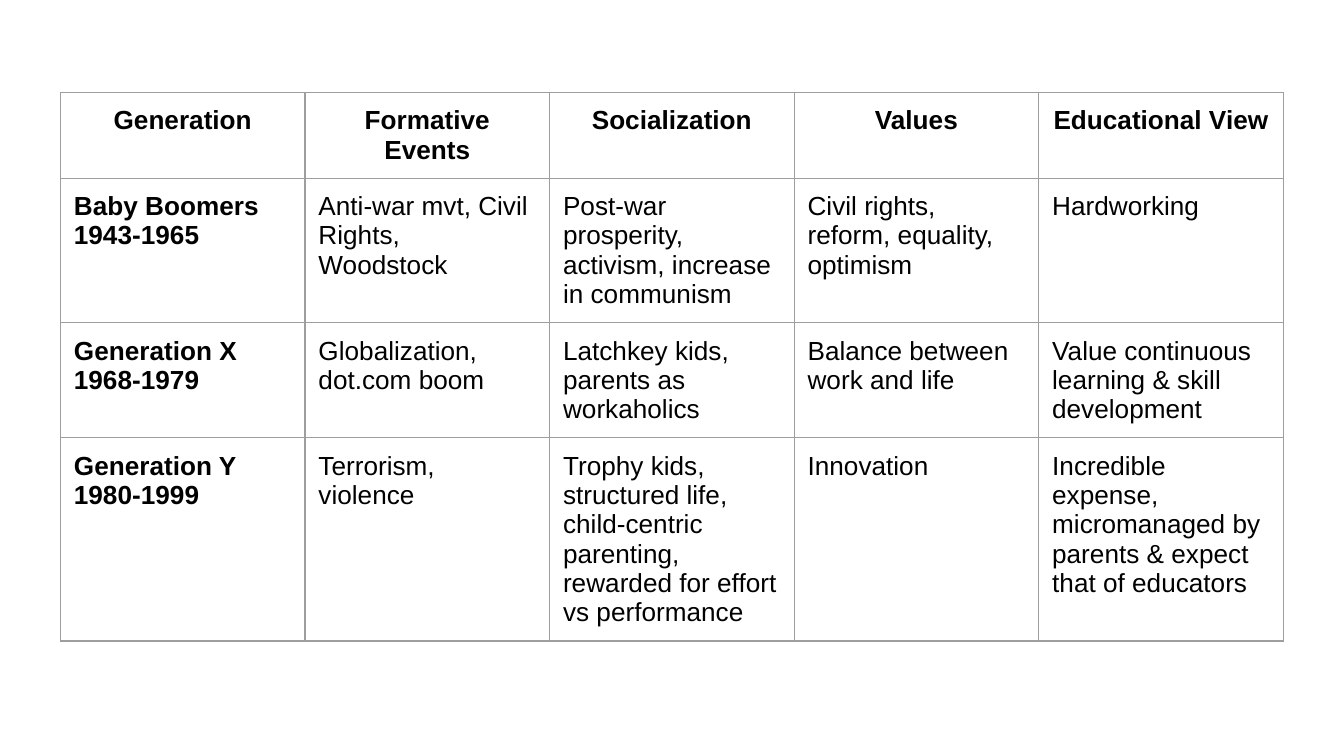
"""Build a slide with a table that compares three generations."""
import pptx
import pptx.dml.color
import pptx.enum.text
import pptx.oxml
import pptx.oxml.ns
import pptx.util

Inches = pptx.util.Inches
Pt = pptx.util.Pt
BLACK = pptx.dml.color.RGBColor(0x00, 0x00, 0x00)
GREY = pptx.dml.color.RGBColor(0x9E, 0x9E, 0x9E)

HEADS = ["Generation", "Formative Events", "Socialization", "Values", "Educational View"]
ROWS = [
    ["Baby Boomers\n1943-1965", "Anti-war mvt, Civil Rights, Woodstock",
     "Post-war prosperity, activism, increase in communism",
     "Civil rights, reform, equality, optimism", "Hardworking"],
    ["Generation X\n1968-1979", "Globalization, dot.com boom",
     "Latchkey kids, parents as workaholics", "Balance between work and life",
     "Value continuous learning & skill development"],
    ["Generation Y\n1980-1999", "Terrorism, violence",
     "Trophy kids, structured life, child-centric parenting, "
     "rewarded for effort vs performance", "Innovation",
     "Incredible expense, micromanaged by parents & expect that of educators"],
]


class Deck:
    def __init__(self, wide, high):
        self.prs = pptx.Presentation()
        self.prs.slide_width = Inches(wide)
        self.prs.slide_height = Inches(high)
        self.font, self.size, self.ink = "Arial", Pt(14), BLACK
        self.edge, self.line, self.pad = GREY, Pt(0.75), Inches(0.1)
        self.slide = self.prs.slides.add_slide(self.prs.slide_layouts[6])

    def border(self, cell):
        props = cell._tc.get_or_add_tcPr()
        for side in "LRTB":
            props.append(pptx.oxml.parse_xml(
                f'<a:ln{side} {pptx.oxml.ns.nsdecls("a")} w="{int(self.line)}">'
                f'<a:solidFill><a:srgbClr val="{self.edge}"/></a:solidFill>'
                f'<a:prstDash val="solid"/></a:ln{side}>'))

    def cell(self, cell, text, bold, align):
        cell.margin_left = cell.margin_right = self.pad
        cell.margin_top = cell.margin_bottom = self.pad
        self.border(cell)
        cell.fill.background()
        frame = cell.text_frame
        for i, words in enumerate(text.split("\n")):
            para = frame.add_paragraph() if i else frame.paragraphs[0]
            para.alignment = align
            run = para.add_run()
            run.text = words
            run.font.name, run.font.size = self.font, self.size
            run.font.bold = bold
            run.font.color.rgb = self.ink

    def table(self, left, top, wide, high, rows):
        count = len(rows[0])
        table = self.slide.shapes.add_table(
            len(rows), count, Inches(left), Inches(top),
            Inches(wide * count), Inches(high * len(rows))).table
        table.first_row = table.horz_banding = False
        align = pptx.enum.text.PP_ALIGN
        for r, row in enumerate(rows):
            for c, text in enumerate(row):
                self.cell(table.cell(r, c), text, r == 0 or c == 0,
                          align.LEFT if r else align.CENTER)


def main():
    deck = Deck(10, 10 * 9 / 16)
    deck.table(0.45, 0.69, 1.82, 0.43, [HEADS] + ROWS)
    deck.prs.save("out.pptx")


if __name__ == "__main__":
    main()
